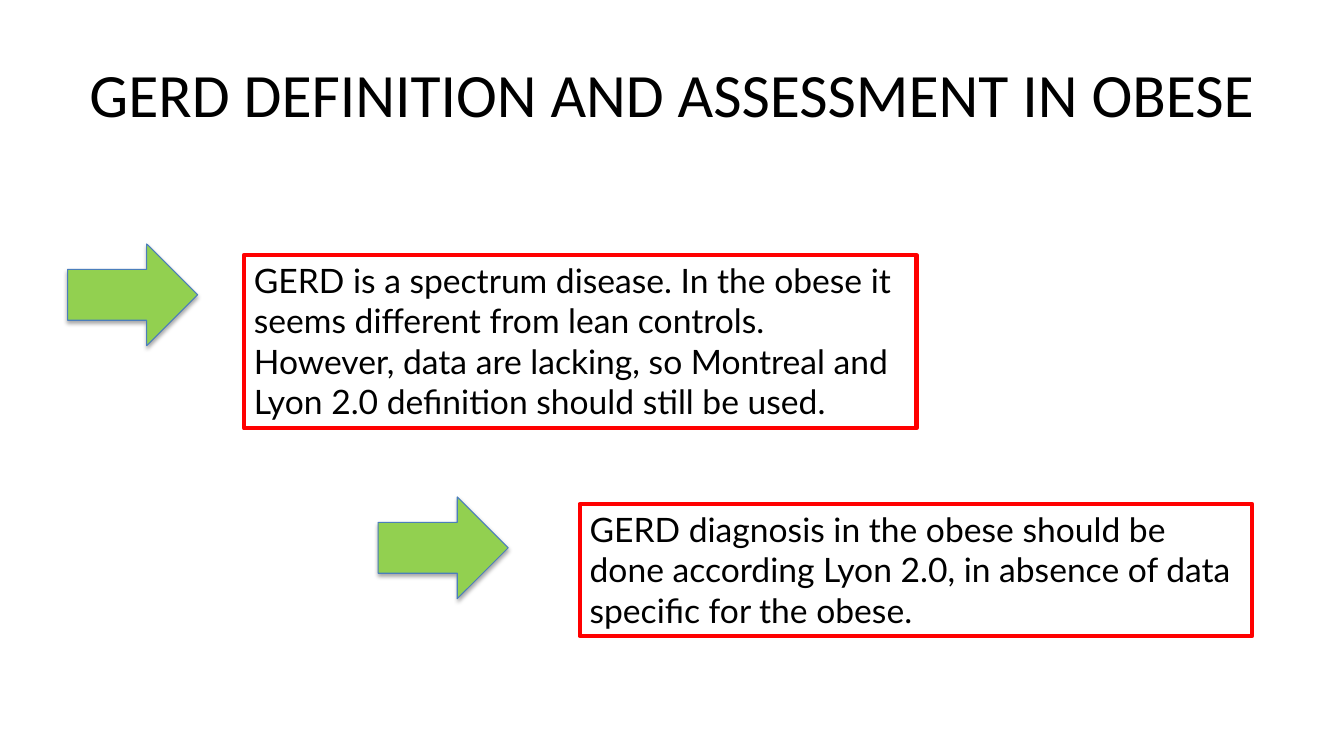
from lxml import etree
from pptx import Presentation
from pptx.dml.color import RGBColor
from pptx.enum import shapes, text
from pptx.oxml import parse_xml
from pptx.oxml.ns import nsdecls
from pptx.util import Inches, Pt

STATEMENTS = [
    # arrow left, arrow top, box left, box top, box height, wording
    (0.67, 2.42, 2.42, 2.53, 1.72,
     "GERD is a spectrum disease. In the obese it seems different from lean "
     "controls. However, data are lacking, so Montreal and Lyon 2.0 definition "
     "should still be used."),
    (3.75, 4.93, 5.75, 5, 1.31,
     "GERD diagnosis in the obese should be done according Lyon 2.0, in absence "
     "of data specific for the obese."),
]


def color(value):
    return RGBColor.from_string(value)


def set_line(shape, value, width):
    shape.line.color.rgb = color(value)
    shape.line.width = Pt(width)


def add_text(page, left, top, width, height, wording, size, font):
    box = page.shapes.add_textbox(Inches(left), Inches(top), Inches(width), Inches(height))
    box.text_frame.word_wrap = True
    para = box.text_frame.paragraphs[0]
    para.text = wording
    para.font.size = Pt(size)
    para.font.name = font
    para.font.color.rgb = color("000000")
    return box


def add_title(page, wording):
    box = add_text(page, 0.67, 0.3, 12, 1.25, wording, 44, "Calibri")
    box.text_frame.vertical_anchor = text.MSO_ANCHOR.MIDDLE
    box.text_frame.paragraphs[0].alignment = text.PP_ALIGN.CENTER


def add_framed_text(page, left, top, height, wording):
    box = add_text(page, left, top, 6.67, height, wording, 24, "Lato")
    box.text_frame.auto_size = text.MSO_AUTO_SIZE.SHAPE_TO_FIT_TEXT
    set_line(box, "FF0000", 3)


def add_drop_shadow(shape, blur, distance, opacity):
    """Cast a black shadow straight down; blur and distance in points, opacity in percent."""
    effects = parse_xml(f"<a:effectLst {nsdecls('a')}/>")
    shadow = etree.SubElement(
        effects, "{%s}outerShdw" % effects.nsmap["a"],
        blurRad=str(Pt(blur)), dist=str(Pt(distance)), dir="5400000", rotWithShape="0")
    black = etree.SubElement(shadow, "{%s}srgbClr" % effects.nsmap["a"], val="000000")
    etree.SubElement(black, "{%s}alpha" % effects.nsmap["a"], val=str(opacity * 1000))
    shape._element.spPr.append(effects)


def add_arrow(page, left, top):
    arrow = page.shapes.add_shape(
        shapes.MSO_SHAPE.RIGHT_ARROW, Inches(left), Inches(top), Inches(1.29), Inches(1.01))
    arrow.fill.solid()
    arrow.fill.fore_color.rgb = color("92D050")
    set_line(arrow, "4B7EBC", 0.75)
    add_drop_shadow(arrow, 3.1, 1.8, 35)


def main():
    deck = Presentation()
    deck.slide_width, deck.slide_height = Inches(13.33), Inches(7.5)
    page = deck.slides.add_slide(deck.slide_layouts[6])
    add_title(page, "GERD DEFINITION AND ASSESSMENT IN OBESE")
    for arrow_left, arrow_top, left, top, height, wording in STATEMENTS:
        add_framed_text(page, left, top, height, wording)
        add_arrow(page, arrow_left, arrow_top)
    deck.save("out.pptx")


if __name__ == "__main__":
    main()
